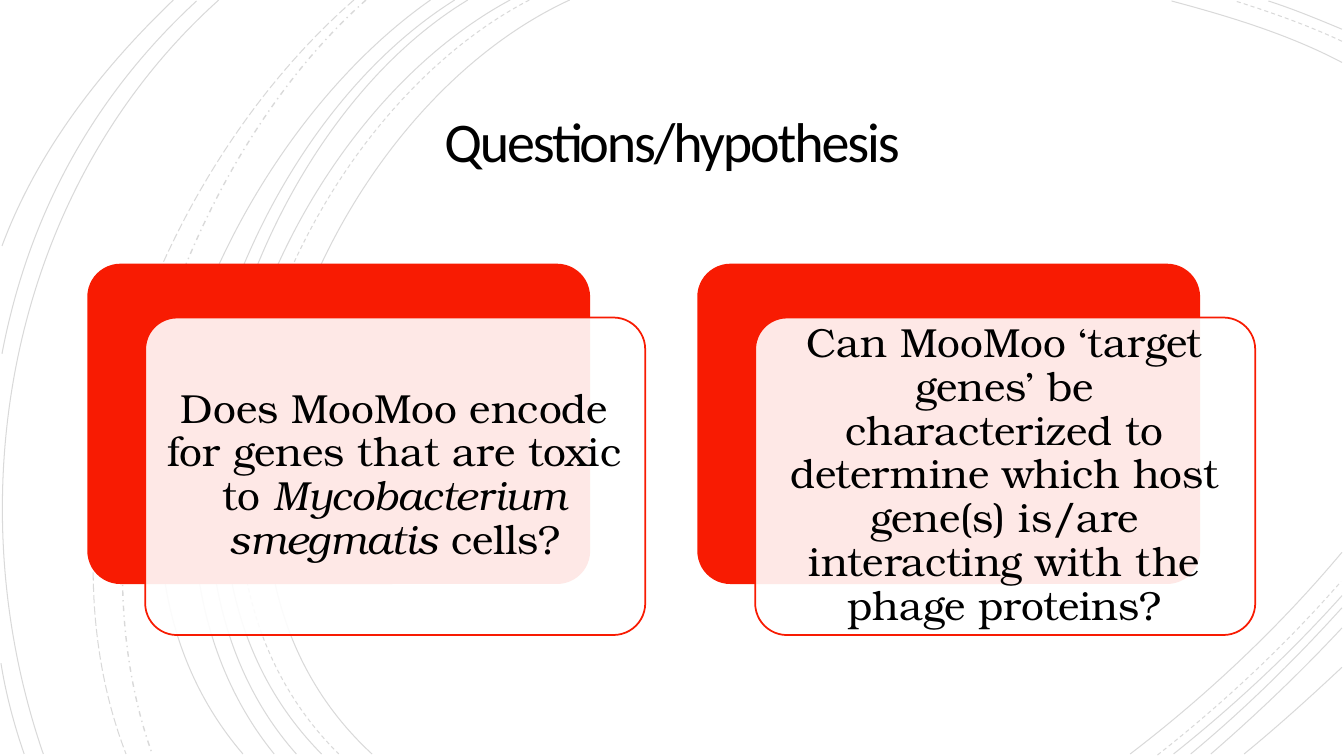
from pptx import Presentation
from pptx.dml.color import RGBColor
from pptx.enum.dml import MSO_LINE as Dash
from pptx.enum.shapes import MSO_SHAPE as Form
from pptx.enum.text import MSO_ANCHOR as Anchor, MSO_AUTO_SIZE as Fit, PP_ALIGN as Align
from pptx.oxml.ns import qn
from pptx.oxml.xmlchemy import OxmlElement
from pptx.util import Pt

PX = 9144  # 100 px to the inch
BLACK, WHITE, RED = "000000", "FFFFFF", "F81B02"


def paint(fill, color):
    fill.solid()
    fill.fore_color.rgb = RGBColor.from_string(color)


def fade(shape, pct):
    """Set the opacity of the first colour in a shape."""
    alpha = OxmlElement("a:alpha")
    alpha.set("val", str(pct * 1000))
    next(shape.element.iter(qn("a:srgbClr"))).append(alpha)


deck = Presentation()
deck.slide_width, deck.slide_height = 1333 * PX, 750 * PX
slide = deck.slides.add_slide(deck.slide_layouts[5])
shapes = slide.shapes
paint(slide.background.fill, WHITE)

# Background arcs: start, two control points and end of each curve
solid, dash = Dash.SOLID, Dash.DASH
arcs = [
    (solid, (565, 0), (315, 115), (143, 540), (369, 748)),
    (solid, (1331, 62), (1278, 34), (1218, 16), (1162, 1)),
    (solid, (1121, 748), (1197, 690), (1269, 622), (1331, 548)),
    (dash, (525, 0), (285, 125), (123, 537), (336, 748)),
    (dash, (1331, 41), (1297, 25), (1260, 12), (1225, 1)),
    (dash, (1148, 749), (1213, 698), (1275, 640), (1330, 577)),
    (solid, (506, 0), (270, 127), (110, 537), (319, 748)),
    (solid, (1331, 29), (1307, 19), (1283, 9), (1258, 1)),
    (solid, (1164, 748), (1223, 701), (1280, 648), (1331, 591)),
    (solid, (464, 0), (244, 133), (110, 541), (294, 748)),
    (solid, (1181, 748), (1234, 704), (1284, 655), (1331, 603)),
    (solid, (451, 0), (231, 138), (97, 533), (272, 748)),
    (solid, (1201, 748), (1246, 709), (1290, 667), (1331, 623)),
    (solid, (427, 0), (217, 147), (53, 529), (241, 748)),
    (solid, (1234, 748), (1267, 721), (1299, 692), (1331, 662)),
    (Dash.DASH_DOT, (363, 0), (176, 166), (65, 509), (151, 748)),
    (Dash.LONG_DASH, (351, 0), (157, 169), (29, 499), (125, 748)),
    (solid, (217, 0), (11, 185), (-46, 490), (43, 748)),
    (solid, (195, 1), (92, 96), (28, 214), (2, 351)),
    (solid, (1, 658), (6, 689), (14, 719), (24, 748)),
    (solid, (172, 0), (100, 69), (37, 150), (2, 244)),
]
for style, start, *knots in arcs:
    pen = shapes.build_freeform(*start, scale=PX)
    pen.add_line_segments(knots, close=False)
    arc = pen.convert_to_shape()
    # Merge the three segments into one cubic curve
    route = next(arc.element.iter(qn("a:path")))
    curve = OxmlElement("a:cubicBezTo")
    for leg in route.findall(qn("a:lnTo")):
        curve.append(leg[0])
        route.remove(leg)
    route.append(curve)
    arc.shadow.inherit = False
    arc.fill.background()
    paint(arc.line.fill, BLACK)
    arc.line.width = Pt(1 if style == Dash.DASH_DOT else 0.75)
    arc.line.dash_style = style
    fade(arc, 15)

# Title
title = shapes.title
title.left, title.top, title.width, title.height = 192 * PX, 87 * PX, 949 * PX, 115 * PX
title.text_frame.text = "Questions/hypothesis"
head = title.text_frame.paragraphs[0]
head.line_spacing = 0.85
head.runs[0].font.size = Pt(40)
head.runs[0].font.name = "Calibri"
paint(head.runs[0].font.fill, BLACK)
next(title.element.iter(qn("a:rPr"))).set("spc", "-150")

# Question cards: red block, pale panel, text on top
cards = [
    [("Does MooMoo encode for genes that are toxic to ", False),
     ("Mycobacterium smegmatis ", True), ("cells?", False)],
    [("Can MooMoo ‘target genes’ be characterized to determine which host "
      "gene(s) is/are interacting with the phage proteins?", False)],
]
layers = [(88, 263, RED, 2), (144, 315, WHITE, 1.25)]
labels = []
for col, words in enumerate(cards):
    shift = col * 605
    for left, top, color, width in layers:
        block = shapes.add_shape(Form.ROUNDED_RECTANGLE, (left + shift) * PX, top * PX,
                                 496 * PX, 315 * PX)
        block.adjustments[0] = 0.1
        block.shadow.inherit = False
        paint(block.fill, color)
        paint(block.line.fill, RED)
        block.line.width = Pt(width)
    fade(block, 90)

    label = shapes.add_textbox((153 + shift) * PX, 324 * PX, 477 * PX, 296 * PX)
    labels.append(label)
    para = label.text_frame.paragraphs[0]
    para.line_spacing = 0.9
    for text, slant in words:
        run = para.add_run()
        run.text = text
        run.font.size = Pt(29)
        run.font.name = "TeX Gyre Bonum"
        run.font.italic = slant
        paint(run.font.fill, BLACK)

# Frame settings shared by the title and the cards
for box, inset in [(title, 25)] + [(label, 12) for label in labels]:
    frame = box.text_frame
    frame.word_wrap = True
    frame.auto_size = Fit.NONE
    frame.vertical_anchor = Anchor.MIDDLE
    frame.margin_left = frame.margin_right = inset * PX
    frame.margin_top = frame.margin_bottom = inset * PX
    frame.paragraphs[0].alignment = Align.CENTER

deck.save("out.pptx")
